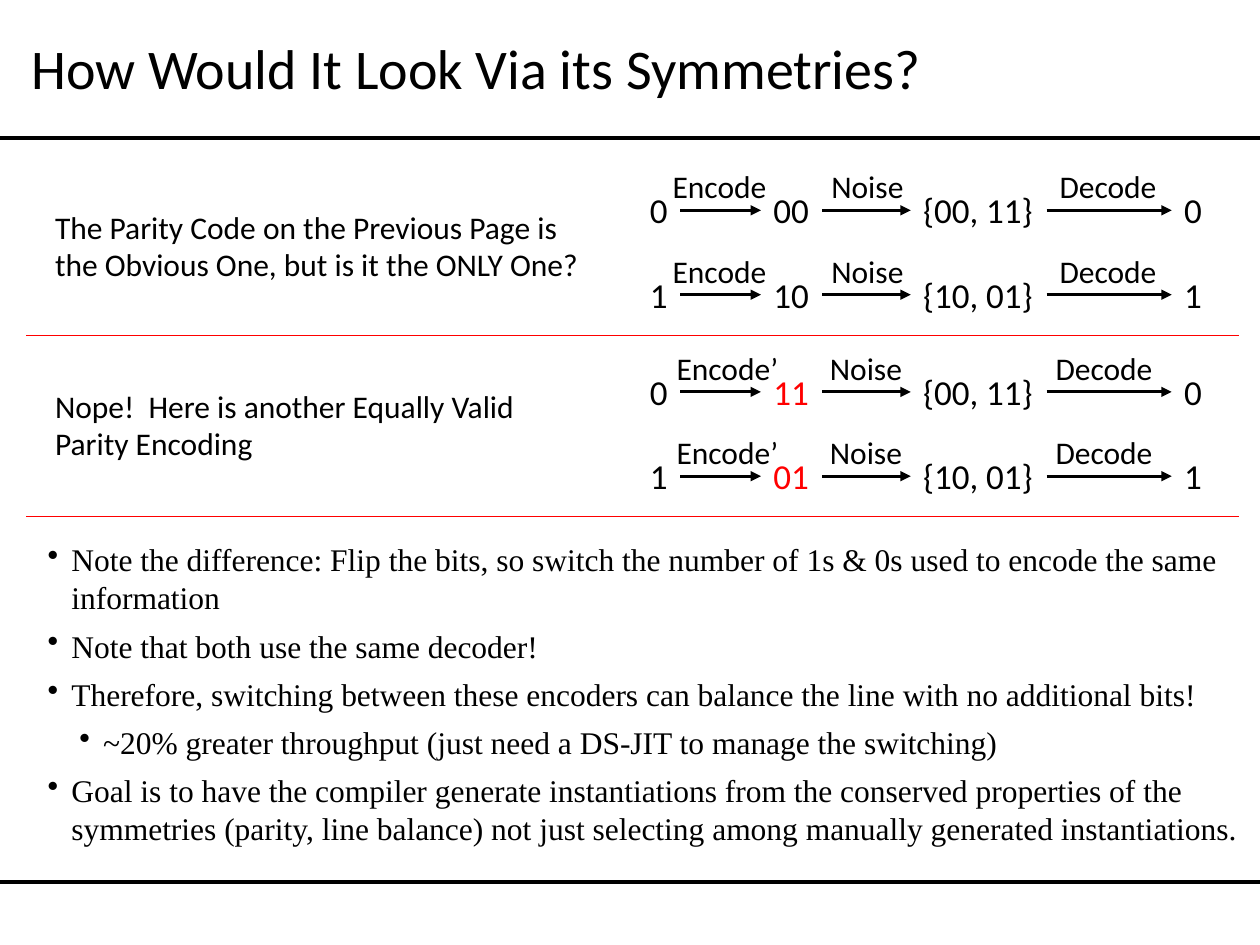
from lxml import etree
from pptx import Presentation
from pptx.dml.color import RGBColor
from pptx.enum.shapes import MSO_CONNECTOR
from pptx.enum.text import MSO_ANCHOR, MSO_AUTO_SIZE, PP_ALIGN
from pptx.oxml.ns import qn
from pptx.util import Cm, Pt

LINE = MSO_CONNECTOR.STRAIGHT
MIDDLE = MSO_ANCHOR.MIDDLE
GROW = MSO_AUTO_SIZE.SHAPE_TO_FIT_TEXT
LEFT = PP_ALIGN.LEFT
COLORS = {"black": "000000", "red": "FF0000"}

deck = Presentation()
deck.slide_width, deck.slide_height = Cm(25.4), Cm(19.05)
slide = deck.slides.add_slide(deck.slide_layouts[5])
shapes = slide.shapes


def write(text, box=None, shape=None, size=18, face="Calibri",
          color="black", wrap=True, indents=None):
    """Fill a shape, or a new text box, with one paragraph per line."""
    if shape is None:
        shape = shapes.add_textbox(*[Cm(v) for v in box])
        shape.text_frame.auto_size = GROW
    frame = shape.text_frame
    frame.word_wrap = wrap
    frame.text = text
    for i, para in enumerate(frame.paragraphs):
        if indents:
            para.level = 1 if indents[i] < 1 else 2
            props = para._p.get_or_add_pPr()
            props.set("marL", str(Cm(indents[i])))
            props.set("indent", str(Cm(-0.48)))
            etree.SubElement(props, qn("a:buChar")).set("char", "•")
            para.space_after = Pt(6)
            para.line_spacing = Pt(21.6)
        para.alignment = LEFT
        para.font.size = Pt(size)
        para.font.name = face
        para.font.color.rgb = RGBColor.from_string(COLORS[color])
    return shape


def rule(x1, y1, x2, y2, width, color="black", head=False):
    """Draw a straight line, with an arrowhead at its end if asked."""
    line = shapes.add_connector(LINE, Cm(x1), Cm(y1), Cm(x2), Cm(y2))
    line.line.width = Pt(width)
    line.line.color.rgb = RGBColor.from_string(COLORS[color])
    if head:
        tip = etree.SubElement(line.line._get_or_add_ln(), qn("a:tailEnd"))
        tip.set("type", "triangle")
    etree.SubElement(line._element.spPr, qn("a:effectLst"))
    return line


# Frame lines and title
for y in (2.79, 17.78):
    rule(25.4, y, 0, y, 2.25)
title = shapes.title
title.left, title.top, title.width, title.height = (
    Cm(0.38), Cm(0.51), Cm(20.65), Cm(1.7))
title.text_frame.vertical_anchor = MIDDLE
write("How Would It Look Via its Symmetries?", shape=title, size=32)

# Questions on the left
write("The Parity Code on the Previous Page is the Obvious One, "
      "but is it the ONLY One?", box=(0.86, 4.06, 11.4, 1.8))
write("Nope!  Here is another Equally Valid Parity Encoding",
      box=(0.86, 7.67, 10.06, 1.8))

# Code chains: state boxes joined by labelled arrows
cols = [(12.85, 0.86), (15.34, 1.24), (18.36, 2.74), (23.62, 0.86)]
high, step = 1.12, 1.7
plain = [("Encode", 13.31, 2.44), ("Noise", 16.51, 1.98),
         ("Decode", 21.11, 2.49)]
prime = [("Encode’", 13.39, 2.59), ("Noise", 16.48, 1.98),
         ("Decode", 21.03, 2.49)]
chains = [(3.68, plain, ("00", "10"), "black"),
          (7.34, prime, ("11", "01"), "red")]
for start, labels, codes, shade in chains:
    for bit, noisy in enumerate(("{00, 11}", "{10, 01}")):
        top = start + bit * step
        states = []
        for i, word in enumerate((str(bit), codes[bit], noisy, str(bit))):
            x, wide = cols[i]
            states.append(write(word, box=(x, top, wide, high), size=20,
                                color=shade if i == 1 else "black",
                                wrap=False))
        for i, (name, x, wide) in enumerate(labels):
            y = top + high / 2
            arrow = rule(sum(cols[i]), y, cols[i + 1][0], y, 1.75, head=True)
            arrow.begin_connect(states[i], 3)
            arrow.end_connect(states[i + 1], 1)
            write(name, box=(x, top - 0.43, wide, 1.02), wrap=False)

# Notes
notes = [
    ("Note the difference: Flip the bits, so switch the number of 1s & 0s "
     "used to encode the same information", 0.66),
    ("Note that both use the same decoder!", 0.66),
    ("Therefore, switching between these encoders can balance the line "
     "with no additional bits!", 0.66),
    ("~20% greater throughput (just need a DS-JIT to manage the switching)",
     1.3),
    ("Goal is to have the compiler generate instantiations from the "
     "conserved properties of the symmetries (parity, line balance) not "
     "just selecting among manually generated instantiations.", 0.66),
]
write("\n".join(text for text, _ in notes), box=(0.53, 10.77, 24.79, 6.48),
      face="Times New Roman", indents=[inset for _, inset in notes])

# Dividers
for y in (6.76, 10.41):
    rule(0.53, y, 24.97, y, 0.75, color="red")

deck.save("out.pptx")
